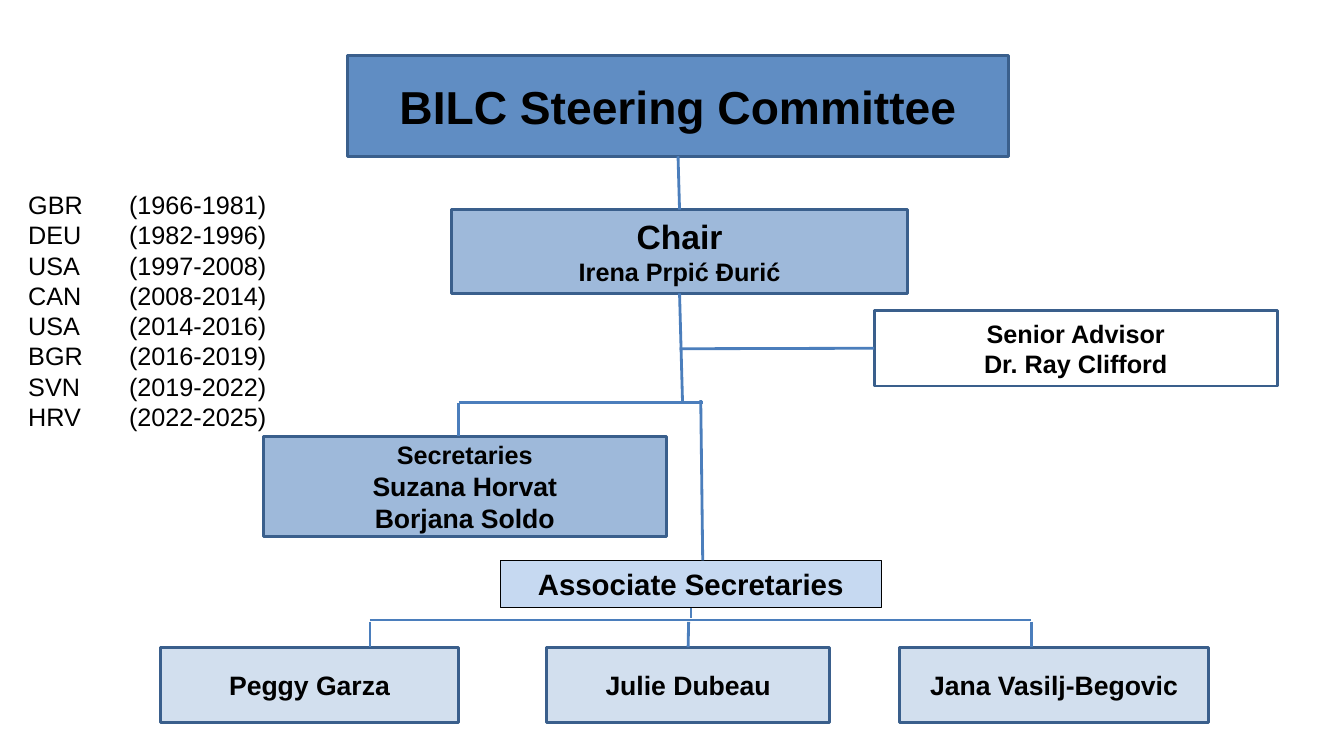
"""Build the BILC Steering Committee organisation chart slide."""
from dataclasses import dataclass
from typing import Optional

from lxml.etree import SubElement
from pptx import Presentation
from pptx.dml.color import RGBColor
from pptx.enum.shapes import MSO_CONNECTOR, MSO_SHAPE
from pptx.enum.text import MSO_ANCHOR, MSO_AUTO_SIZE, PP_ALIGN
from pptx.oxml.ns import qn
from pptx.util import Inches, Pt


@dataclass(frozen=True)
class Theme:
    font: str = "Arial"
    text: str = "000000"
    blue: str = "4F81BD"
    pale: str = "C6D9F1"
    border: str = "3A5F8C"
    link: str = "4B7EBC"
    title: int = 33
    chair: int = 24
    heading: int = 21
    name: int = 19
    small: int = 18


@dataclass(frozen=True)
class Box:
    left: float
    top: float
    width: float
    height: float
    lines: tuple
    fill: Optional[str] = None
    opacity: int = 100
    border: str = Theme.border
    weight: float = 2
    preset: MSO_SHAPE = MSO_SHAPE.FLOWCHART_PROCESS


@dataclass(frozen=True)
class Link:
    start: tuple
    end: tuple
    begin_at: Optional[tuple] = None
    end_at: Optional[tuple] = None
    color: str = Theme.link
    weight: float = 2


THEME = Theme()
TOP, LEFT, BOTTOM = 0, 1, 2
MEMBER_TOP, MEMBER_HEIGHT = 6.42, 0.75
BRANCH_Y = 6.15

COMMITTEE = Box(3.45, 0.55, 6.55, 1, (("BILC Steering Committee", THEME.title),), THEME.blue, 90)

MEMBERS = {
    name: Box(left, MEMBER_TOP, width, MEMBER_HEIGHT, ((name, THEME.name),), THEME.blue, 25)
    for name, left, width in (
        ("Peggy Garza", 1.59, 2.96),
        ("Julie Dubeau", 5.42, 2.81),
        ("Jana Vasilj-Begovic", 8.92, 3.07),
    )
}

BOXES = {
    "chair": Box(4.48, 2.08, 4.52, 0.83,
                 (("Chair", THEME.chair), ("Irena Prpić Đurić", THEME.small)), THEME.blue, 55),
    "advisor": Box(8.67, 3.08, 4, 0.75,
                   (("Senior Advisor", THEME.small), ("Dr. Ray Clifford", THEME.small))),
    "secretaries": Box(2.61, 4.33, 4, 0.99,
                       (("Secretaries", THEME.small), ("Suzana Horvat", THEME.name),
                        ("Borjana Soldo", THEME.name)), THEME.blue, 55),
    "associates": Box(4.96, 5.56, 3.78, 0.47, (("Associate Secretaries", THEME.heading),),
                      THEME.pale, border=THEME.text, weight=0.75, preset=MSO_SHAPE.RECTANGLE),
    **MEMBERS,
}

LINKS = (
    Link((6.73, 1.55), (6.74, 2.08), ("committee", BOTTOM), ("chair", TOP)),
    Link((8.67, 3.46), (6.74, 3.46), ("advisor", LEFT)),
    Link((6.74, 2.91), (6.77, 4), ("chair", BOTTOM)),
    Link((4.55, 3.99), (6.97, 3.99)),
    Link((4.55, 4), (4.55, 4.33)),
    Link((6.95, 3.97), (6.97, 5.56)),
    Link((3.67, BRANCH_Y), (10.23, BRANCH_Y)),
    Link((3.67, 6.17), (3.67, MEMBER_TOP)),
    Link((6.83, 6.17), (6.83, MEMBER_TOP), end_at=("Julie Dubeau", TOP)),
    Link((10.23, 6.17), (10.23, MEMBER_TOP)),
    Link((6.85, 6.03), (6.85, 6.13), ("associates", BOTTOM), color=THEME.blue, weight=1.5),
)

CHAIRMANSHIPS = (
    ("GBR", "1966-1981"), ("DEU", "1982-1996"), ("USA", "1997-2008"), ("CAN", "2008-2014"),
    ("USA", "2014-2016"), ("BGR", "2016-2019"), ("SVN", "2019-2022"), ("HRV", "2022-2025"),
)


def place(shape, left: float, top: float, width: float, height: float) -> None:
    """Move and size a shape."""
    shape.left, shape.top = Inches(left), Inches(top)
    shape.width, shape.height = Inches(width), Inches(height)


def set_frame(frame, anchor: MSO_ANCHOR) -> None:
    """Give a text frame the shared margins and wrapping."""
    frame.margin_left = frame.margin_right = Inches(0.12)
    frame.margin_top = frame.margin_bottom = Inches(0.06)
    frame.word_wrap = True
    frame.auto_size = MSO_AUTO_SIZE.NONE
    frame.vertical_anchor = anchor


def set_font(paragraph, size: int, bold: bool) -> None:
    """Format every run of a paragraph."""
    for run in paragraph.runs:
        run.font.name = THEME.font
        run.font.size = Pt(size)
        run.font.bold = bold
        run.font.color.rgb = RGBColor.from_string(THEME.text)


def style_box(shape, box: Box) -> None:
    """Apply a box's fill, outline and text to a shape."""
    if box.fill:
        shape.fill.solid()
        shape.fill.fore_color.rgb = RGBColor.from_string(box.fill)
        if box.opacity < 100:
            color = shape._element.spPr.find(qn("a:solidFill"))[0]
            SubElement(color, qn("a:alpha"), val=str(box.opacity * 1000))
    else:
        shape.fill.background()
    shape.line.color.rgb = RGBColor.from_string(box.border)
    shape.line.width = Pt(box.weight)
    frame = shape.text_frame
    set_frame(frame, MSO_ANCHOR.MIDDLE)
    frame.text = "\n".join(text for text, _ in box.lines)
    for paragraph, (_, size) in zip(frame.paragraphs, box.lines):
        paragraph.alignment = PP_ALIGN.CENTER
        set_font(paragraph, size, True)


def add_box(slide, box: Box):
    """Draw one box of the chart."""
    shape = slide.shapes.add_shape(box.preset, 0, 0, 0, 0)
    place(shape, box.left, box.top, box.width, box.height)
    shape.shadow.inherit = False
    style_box(shape, box)
    return shape


def add_link(slide, link: Link, shapes: dict) -> None:
    """Draw one line and join it to its boxes."""
    ends = [Inches(value) for value in link.start + link.end]
    line = slide.shapes.add_connector(MSO_CONNECTOR.STRAIGHT, *ends)
    line.line.color.rgb = RGBColor.from_string(link.color)
    line.line.width = Pt(link.weight)
    SubElement(line._element.spPr, qn("a:effectLst"))
    if link.begin_at:
        line.begin_connect(shapes[link.begin_at[0]], link.begin_at[1])
    if link.end_at:
        line.end_connect(shapes[link.end_at[0]], link.end_at[1])


def fill_chairmanships(history) -> None:
    """List the chairing nations with their years on a tab stop."""
    place(history, 0.16, 1.82, 4.4, 2.52)
    set_frame(history.text_frame, MSO_ANCHOR.TOP)
    history.text_frame.text = "\n".join(f"{nation}\t({years})" for nation, years in CHAIRMANSHIPS)
    for paragraph in history.text_frame.paragraphs:
        properties = paragraph._p.get_or_add_pPr()
        properties.set("marL", "0")
        properties.set("indent", "0")
        SubElement(properties, qn("a:buNone"))
        tabs = SubElement(properties, qn("a:tabLst"))
        SubElement(tabs, qn("a:tab"), pos=str(Inches(1)), algn="l")
        paragraph.space_before = Pt(0)
        set_font(paragraph, THEME.small, False)


def main() -> None:
    """Assemble and save the slide."""
    deck = Presentation()
    deck.slide_width, deck.slide_height = Inches(13.33), Inches(7.5)
    slide = deck.slides.add_slide(deck.slide_layouts[1])
    committee = slide.shapes.title
    place(committee, COMMITTEE.left, COMMITTEE.top, COMMITTEE.width, COMMITTEE.height)
    style_box(committee, COMMITTEE)
    fill_chairmanships(slide.placeholders[1])
    shapes = {"committee": committee}
    shapes.update({key: add_box(slide, box) for key, box in BOXES.items()})
    for link in LINKS:
        add_link(slide, link, shapes)
    deck.save("out.pptx")


if __name__ == "__main__":
    main()
